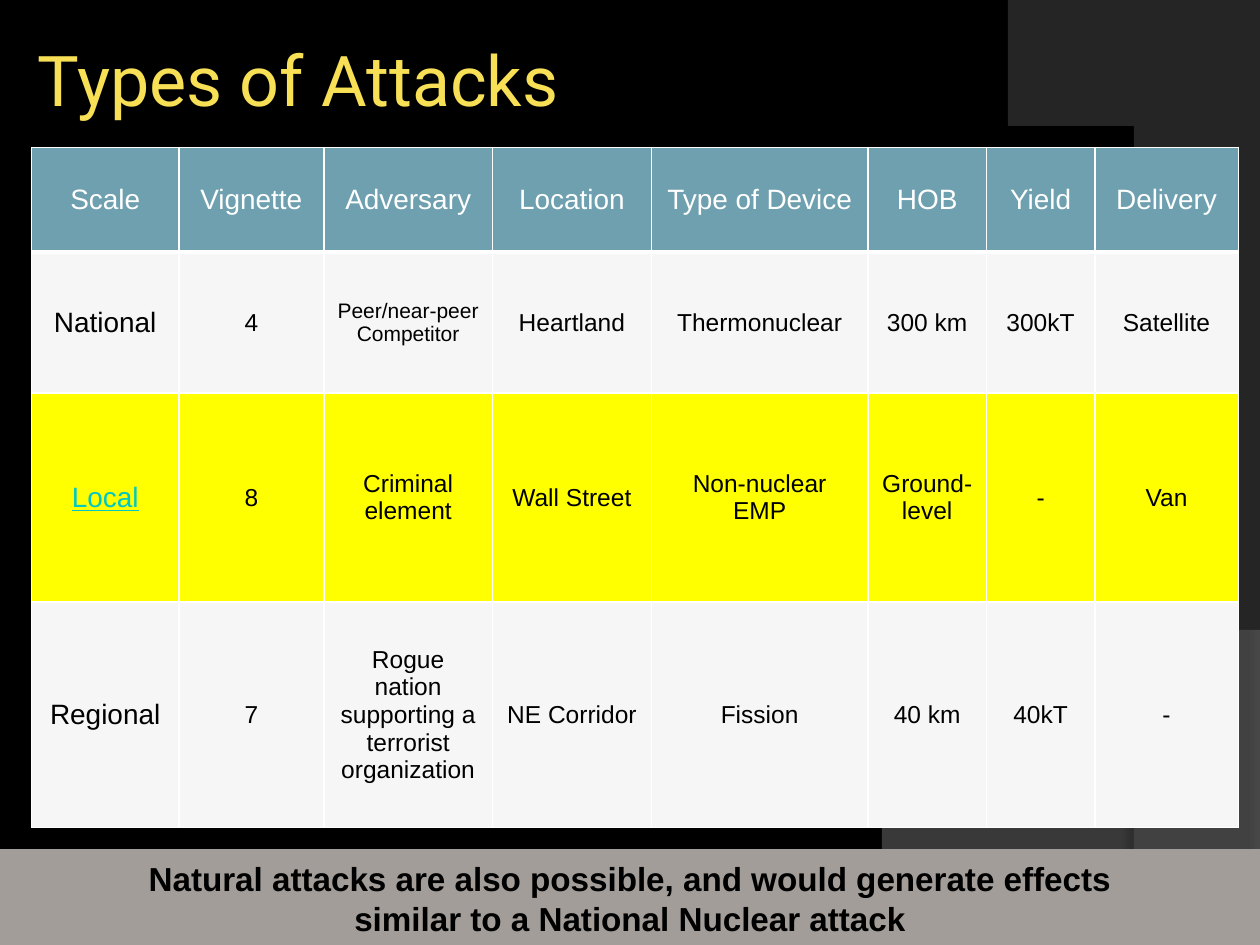
from lxml import etree
from pptx import Presentation
from pptx.dml.color import RGBColor
from pptx.enum.shapes import MSO_SHAPE
from pptx.enum.text import MSO_ANCHOR as ANCHOR, PP_ALIGN as ALIGN
from pptx.oxml import parse_xml
from pptx.oxml.ns import nsdecls, qn
from pptx.util import Inches, Pt

W, H = 10, 7.5
COLORS = {
    "background": "000000", "title": "F7DF56", "header": "6EA0B0",
    "row": "F6F6F6", "highlight": "FFFF00", "link": "00C8C3",
    "white": "FFFFFF", "black": "000000", "banner": "A29D99",
    "low_swoosh": "7F7F7F", "side_swoosh": "5E5E5E",
}
COLUMNS = [1.17, 1.15, 1.34, 1.26, 1.72, 0.94, 0.86, 1.14]
ROWS = [0.83, 1.12, 1.66, 1.79]
ATTACKS = [
    ["Scale", "Vignette", "Adversary", "Location", "Type of Device", "HOB", "Yield", "Delivery"],
    ["National", "4", "Peer/near-peer Competitor", "Heartland", "Thermonuclear",
     "300 km", "300kT", "Satellite"],
    ["Local", "8", "Criminal element", "Wall Street", "Non-nuclear EMP",
     "Ground-level", "-", "Van"],
    ["Regional", "7", "Rogue nation supporting a terrorist organization", "NE Corridor",
     "Fission", "40 km", "40kT", "-"],
]
ROW_FILLS = ["header", "row", "highlight", "row"]


def rgb(name):
    return RGBColor.from_string(COLORS[name])


def set_font(p, size, color, face="Arial", bold=False, align=ALIGN.CENTER):
    p.alignment = align
    font = p.font
    font.name, font.size, font.bold = face, Pt(size), bold
    font.color.rgb = rgb(color)


def bezier(p0, p1, p2, p3, steps=40):
    """Points along a cubic curve, both ends included."""
    def at(t):
        u = 1 - t
        return tuple(u**3 * a + 3 * u * u * t * b + 3 * u * t * t * c + t**3 * d
                     for a, b, c, d in zip(p0, p1, p2, p3))
    return [at(i / steps) for i in range(steps + 1)]


def add_swoosh(slide, points, color, opacity, shadow_opacity, distance, angle):
    builder = slide.shapes.build_freeform(*points[0], scale=Inches(1))
    builder.add_line_segments(points[1:], close=True)
    s = builder.convert_to_shape()
    s.fill.solid()
    s.fill.fore_color.rgb = rgb(color)
    s.line.fill.background()
    # Transparency and soft shadow
    sp_pr = s._element.spPr
    clr = sp_pr.find(qn("a:solidFill"))[0]
    etree.SubElement(clr, qn("a:alpha"), val=str(opacity * 1000))
    sp_pr.append(parse_xml(
        f'<a:effectLst {nsdecls("a")}><a:outerShdw blurRad="{Pt(4)}" dist="{Pt(distance)}" '
        f'dir="{angle * 60000}" algn="ctr" rotWithShape="0"><a:srgbClr val="{COLORS["black"]}">'
        f'<a:alpha val="{shadow_opacity * 1000}"/></a:srgbClr></a:outerShdw></a:effectLst>'))


def set_title(slide, text):
    sp = slide.shapes.title
    sp.left, sp.top, sp.width, sp.height = (Inches(v) for v in (0.25, 0, 8.17, 1.25))
    tf = sp.text_frame
    tf.text = text
    tf.vertical_anchor = ANCHOR.MIDDLE
    tf.margin_left = tf.margin_right = tf.margin_top = tf.margin_bottom = Inches(0.05)
    set_font(tf.paragraphs[0], 40, "title", "Roboto", align=ALIGN.LEFT)


def set_borders(cell, bottom=1):
    tc_pr = cell._tc.get_or_add_tcPr()
    for side, width in zip("LRTB", (1, 1, 1, bottom)):
        tc_pr.append(parse_xml(
            f'<a:ln{side} {nsdecls("a")} w="{Pt(width)}"><a:solidFill>'
            f'<a:srgbClr val="{COLORS["white"]}"/></a:solidFill></a:ln{side}>'))


def text_size(row, col):
    if row == 0 or col == 0:
        return 16
    return 12 if (row, col) == (1, 2) else 14


def add_attack_table(slide):
    table = slide.shapes.add_table(
        len(ROWS), len(COLUMNS), Inches(0.25), Inches(1.17),
        Inches(sum(COLUMNS)), Inches(sum(ROWS))).table
    for column, width in zip(table.columns, COLUMNS):
        column.width = Inches(width)
    for r, height in enumerate(ROWS):
        table.rows[r].height = Inches(height)
        for c, text in enumerate(ATTACKS[r]):
            cell = table.cell(r, c)
            cell.text = text
            cell.vertical_anchor = ANCHOR.MIDDLE
            set_borders(cell, bottom=3 if r == 0 else 1)
            cell.fill.solid()
            cell.fill.fore_color.rgb = rgb(ROW_FILLS[r])
            set_font(cell.text_frame.paragraphs[0], text_size(r, c),
                     "white" if r == 0 else "black")
    # The local scale is marked like a link
    r = table.cell(2, 0).text_frame.paragraphs[0].runs[0]
    r.font.underline = True
    r.font.color.rgb = rgb("link")


def add_banner(slide, lines):
    s = slide.shapes.add_shape(MSO_SHAPE.RECTANGLE, 0, Inches(0.9 * H),
                               Inches(W), Inches(0.1 * H))
    s.shadow.inherit = False
    s.fill.solid()
    s.fill.fore_color.rgb = s.line.color.rgb = rgb("banner")
    s.line.width = Pt(1.5)
    tf = s.text_frame
    tf.word_wrap = True
    tf.vertical_anchor = ANCHOR.MIDDLE
    tf.text = "\n".join(lines)
    for p in tf.paragraphs:
        set_font(p, 19, "black", bold=True)


def main():
    prs = Presentation()
    prs.slide_width, prs.slide_height = Inches(W), Inches(H)
    slide = prs.slides.add_slide(prs.slide_layouts[5])
    slide.background.fill.solid()
    slide.background.fill.fore_color.rgb = rgb("background")

    # Backdrop
    low = [(0, H), (W, H)] + bezier((W, 5.2), (5.59, 7.29), (3.91, 7.19), (0, 7.05))
    add_swoosh(slide, low, "low_swoosh", 45, 35, 3.5, 270)
    side = [(W, 0.02), (W, H)] + bezier((8.21, H), (9.35, 6.19), (10.18, 3), (8, 0))
    add_swoosh(slide, side, "side_swoosh", 40, 45, 4, 180)

    # Content
    set_title(slide, "Types of Attacks")
    add_attack_table(slide)
    add_banner(slide, ["Natural attacks are also possible, and would generate effects",
                       "similar to a National Nuclear attack"])
    prs.save("out.pptx")


if __name__ == "__main__":
    main()
